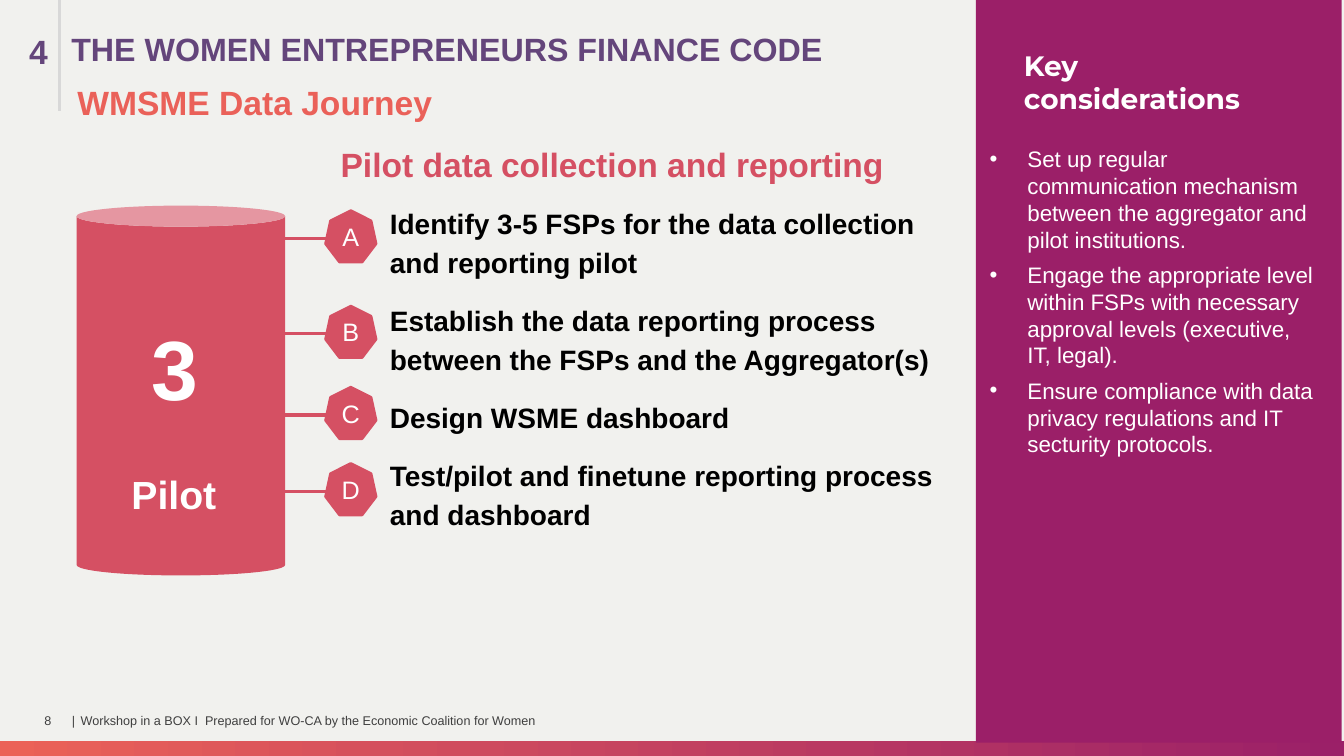
import pptx
import pptx.dml.color
import pptx.enum.shapes
import pptx.enum.text
import pptx.oxml.ns
import pptx.util
from lxml import etree

Pt = pptx.util.Pt
SHAPES = pptx.enum.shapes.MSO_SHAPE
ALIGN = pptx.enum.text.PP_ALIGN
ANCHOR = pptx.enum.text.MSO_ANCHOR

COLOURS = {
    "background": "F1F1EE",
    "plum": "9B1F68",
    "band_plum": "9B2068",
    "band_coral": "EB6258",
    "rose": "D55063",
    "coral": "EA6159",
    "violet": "64457B",
    "rule": "D8D8D8",
    "footer": "3F3F3F",
    "black": "000000",
    "white": "FFFFFF",
}

STEPS = [
    ("A", 150.5, 132.5, "Identify 3-5 FSPs for the data collection and reporting pilot"),
    ("B", 218.7, 132.5, "Establish the data reporting process between the FSPs and the Aggregator(s)"),
    ("C", 276.6, 132.5, "Design WSME dashboard"),
    ("D", 331.1, 114.5, "Test/pilot and finetune reporting process and dashboard"),
]

CONSIDERATIONS = [
    "Set up regular communication mechanism between the aggregator and pilot institutions.",
    "Engage the appropriate level within FSPs with necessary approval levels (executive, IT, legal).",
    "Ensure compliance with data privacy regulations and IT secturity protocols.",
]


def colour(name):
    return pptx.dml.color.RGBColor.from_string(COLOURS[name])


def set_format(target, values):
    for name, value in values.items():
        setattr(target, name, value)


def write_text(frame, texts, size, ink, bold=False, font="Arial", inset=True, anchor=ANCHOR.TOP, **layout):
    side, end = (Pt(7.2), Pt(3.6)) if inset else (0, 0)
    set_format(frame, {
        "word_wrap": True,
        "vertical_anchor": anchor,
        "margin_left": side,
        "margin_right": side,
        "margin_top": end,
        "margin_bottom": end,
    })
    for index, text in enumerate(texts):
        para = frame.add_paragraph() if index else frame.paragraphs[0]
        set_format(para, layout)
        span = para.add_run()
        span.text = text
        set_format(span.font, {"name": font, "size": Pt(size), "bold": bold})
        span.font.color.rgb = colour(ink)


def add_text(page, place, texts, size, ink, **options):
    box = page.shapes.add_textbox(*map(Pt, place))
    write_text(box.text_frame, texts, size, ink, **options)
    return box


def add_shape(page, kind, place, fill):
    shape = page.shapes.add_shape(kind, *map(Pt, place))
    shape.shadow.inherit = False
    shape.line.fill.background()
    shape.fill.solid()
    shape.fill.fore_color.rgb = colour(fill)
    return shape


def add_line(page, start, end, ink):
    line = page.shapes.add_connector(
        pptx.enum.shapes.MSO_CONNECTOR.STRAIGHT, *map(Pt, start + end))
    line.line.width = Pt(2.25)
    line.line.color.rgb = colour(ink)
    etree.SubElement(line._element.spPr, pptx.oxml.ns.qn("a:effectLst"))


def indent(para, left, first=0):
    properties = para._p.get_or_add_pPr()
    properties.set("marL", str(Pt(left)))
    properties.set("indent", str(Pt(first)))
    return properties


def add_bullet(para):
    properties = indent(para, 27, -27)
    ink = etree.SubElement(properties, pptx.oxml.ns.qn("a:buClr"))
    etree.SubElement(ink, pptx.oxml.ns.qn("a:srgbClr"), val=COLOURS["white"])
    etree.SubElement(properties, pptx.oxml.ns.qn("a:buFont"), typeface="Arial")
    etree.SubElement(properties, pptx.oxml.ns.qn("a:buChar"), char="•")


def add_band(page):
    band = add_shape(page, SHAPES.RECTANGLE, (0, 529.2, 960, 10.8), "band_plum")
    band.fill.gradient()
    band.fill.gradient_angle = 180
    for stop, name in zip(band.fill.gradient_stops, ("band_plum", "band_coral")):
        stop.color.rgb = colour(name)


def add_sidebar(page):
    add_shape(page, SHAPES.RECTANGLE, (697, 0, 261.4, 530.6), "plum")
    add_text(page, (724.3, 31, 190.1, 55.4), ["Key considerations"], 20, "white",
             bold=True, font="Montserrat")
    box = add_text(page, (699.8, 100.1, 247.7, 264.2), CONSIDERATIONS, 16, "white",
                   space_before=Pt(6))
    for para in box.text_frame.paragraphs:
        add_bullet(para)


def add_marker(page, letter, top, line_start):
    middle = top + 19.8
    add_line(page, (line_start, middle), (234, middle), "rose")
    marker = add_shape(page, SHAPES.HEPTAGON, (232.6, top, 36, 36.7), "rose")
    marker.line.width = Pt(2)
    marker.line.color.rgb = colour("rose")
    write_text(marker.text_frame, [letter], 18, "white", anchor=ANCHOR.MIDDLE,
               alignment=ALIGN.CENTER)


def add_steps(page):
    box = add_text(page, (271.4, 140.4, 429.8, 244.8), [step[3] for step in STEPS], 20,
                   "black", bold=True, line_spacing=1.15, space_before=Pt(14))
    box.text_frame.paragraphs[0].space_before = Pt(0)
    for letter, top, line_start, _ in STEPS:
        add_marker(page, letter, top, line_start)
    add_text(page, (236.2, 99.4, 455, 36), ["Pilot data collection and reporting"], 24,
             "rose", bold=True)


def add_cylinder(page):
    cylinder = add_shape(page, SHAPES.CAN, (54.7, 146.9, 149, 264.2), "rose")
    cylinder.adjustments[0] = 0.101
    centred = {"bold": True, "alignment": ALIGN.CENTER}
    add_text(page, (46.8, 332.6, 154.8, 39.6), ["Pilot"], 28, "white",
             anchor=ANCHOR.MIDDLE, **centred)
    add_text(page, (67.7, 222.5, 113.8, 79.9), ["3"], 60, "white", **centred)


def add_heading(page):
    add_text(page, (48.2, 54.7, 779, 36), ["WMSME Data Journey"], 24, "coral", bold=True)
    for place, text, size in (
        ((0, 18.7, 64.8, 36), "4", 24),
        ((30.2, 17.3, 877.7, 36), "THE WOMEN ENTREPRENEURS FINANCE CODE", 23),
    ):
        box = add_text(page, place, [text], size, "violet", bold=True)
        indent(box.text_frame.paragraphs[0], 13.7)
    add_line(page, (42.5, 0), (42.5, 79.2), "rule")


def add_footer(page):
    for left, width, text, alignment in (
        (31.7, 15.8, "8", ALIGN.LEFT),
        (49, 7.2, "|", ALIGN.CENTER),
        (57.6, 411.1, "Workshop in a BOX I  Prepared for WO-CA by the Economic Coalition for Women", ALIGN.LEFT),
    ):
        add_text(page, (left, 500.2, width, 28.8), [text], 9, "footer", inset=False,
                 anchor=ANCHOR.MIDDLE, alignment=alignment)


def main():
    deck = pptx.Presentation()
    set_format(deck, {"slide_width": Pt(960), "slide_height": Pt(540)})
    page = deck.slides.add_slide(deck.slide_layouts[6])
    page.background.fill.solid()
    page.background.fill.fore_color.rgb = colour("background")
    add_band(page)
    add_sidebar(page)
    add_steps(page)
    add_cylinder(page)
    add_heading(page)
    add_footer(page)
    deck.save("out.pptx")


if __name__ == "__main__":
    main()
